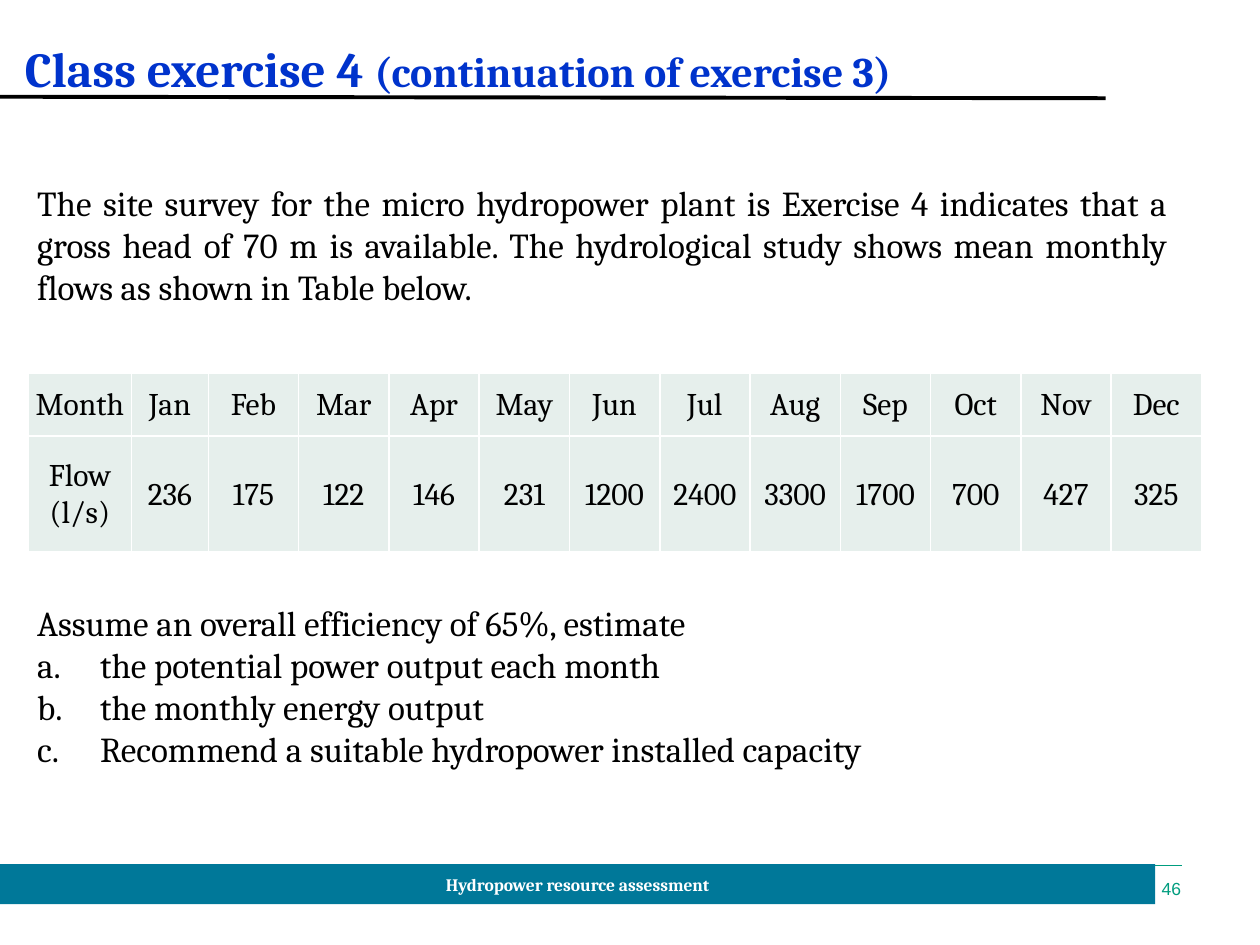
from dataclasses import dataclass
from typing import Any

from lxml.etree import SubElement
from pptx import Presentation
from pptx.dml.color import RGBColor
from pptx.enum.shapes import MSO_CONNECTOR, MSO_SHAPE
from pptx.enum.text import MSO_ANCHOR, PP_ALIGN
from pptx.oxml.ns import qn
from pptx.util import Cm, Pt

HUES = {
    "ink": "000000",
    "white": "FFFFFF",
    "title": "0033CC",
    "bar": "007899",
    "green": "009D7F",
    "cell": "E6EFEC",
}
SERIF = "Cambria"
FLOWS = {
    "Month": "Flow (l/s)", "Jan": "236", "Feb": "175", "Mar": "122",
    "Apr": "146", "May": "231", "Jun": "1200", "Jul": "2400",
    "Aug": "3300", "Sep": "1700", "Oct": "700", "Nov": "427", "Dec": "325",
}
WIDTHS = [2.08, 1.55] + [1.82] * 11
HEIGHTS = [1.27, 2.34]


@dataclass
class Run:
    text: str
    size: float
    hue: str = "ink"
    bold: bool = False
    font: str = SERIF


@dataclass
class Para:
    runs: list[Run]
    align: Any = PP_ALIGN.LEFT
    gap: float = 0
    item: bool = False


@dataclass
class Box:
    left: float
    top: float
    width: float
    height: float
    paras: list[Para]
    anchor: Any = MSO_ANCHOR.TOP
    inset: tuple[float, float] = (0, 0)
    fill: str = ""


@dataclass
class Line:
    start: tuple[float, float]
    end: tuple[float, float]
    hue: str
    width: float


def color(name: str) -> RGBColor:
    return RGBColor.from_string(HUES[name])


def letter(para: Any) -> None:
    props = para._p.get_or_add_pPr()
    props.set("marL", str(Cm(1.27)))
    props.set("indent", str(-Cm(1.27)))
    SubElement(props, qn("a:buFont"), typeface="+mj-lt")
    SubElement(props, qn("a:buAutoNum"), type="alphaLcPeriod")


def write(frame: Any, paras: list[Para]) -> None:
    for num, data in enumerate(paras):
        para = frame.add_paragraph() if num else frame.paragraphs[0]
        para.alignment = data.align
        if data.gap:
            para.space_before = Pt(data.gap)
        if data.item:
            letter(para)
        for part in data.runs:
            run = para.add_run()
            run.text = part.text
            run.font.name = part.font
            run.font.size = Pt(part.size)
            run.font.bold = part.bold
            run.font.color.rgb = color(part.hue)


def add_box(slide: Any, box: Box) -> None:
    area = Cm(box.left), Cm(box.top), Cm(box.width), Cm(box.height)
    if box.fill:
        shape = slide.shapes.add_shape(MSO_SHAPE.RECTANGLE, *area)
        shape.shadow.inherit = False
        shape.fill.solid()
        shape.fill.fore_color.rgb = color(box.fill)
        shape.line.fill.background()
    else:
        shape = slide.shapes.add_textbox(*area)
    frame = shape.text_frame
    frame.word_wrap = True
    frame.vertical_anchor = box.anchor
    frame.margin_left = frame.margin_right = Cm(box.inset[0])
    frame.margin_top = frame.margin_bottom = Cm(box.inset[1])
    write(frame, box.paras)


def add_line(slide: Any, line: Line) -> None:
    ends = [Cm(pos) for pos in line.start + line.end]
    shape = slide.shapes.add_connector(MSO_CONNECTOR.STRAIGHT, *ends)
    shape.line.color.rgb = color(line.hue)
    shape.line.width = Pt(line.width)
    SubElement(shape._element.spPr, qn("a:effectLst"))


def style(cell: Any) -> None:
    cell.vertical_anchor = MSO_ANCHOR.MIDDLE
    cell.margin_left = cell.margin_right = cell.margin_top = Cm(0.03)
    cell.margin_bottom = Cm(0)
    props = cell._tc.get_or_add_tcPr()
    for side in ("lnL", "lnR", "lnT", "lnB"):
        edge = SubElement(props, qn(f"a:{side}"), w=str(Pt(1)))
        fill = SubElement(edge, qn("a:solidFill"))
        SubElement(fill, qn("a:srgbClr"), val=HUES["white"])
    cell.fill.solid()
    cell.fill.fore_color.rgb = color("cell")


def add_flows(slide: Any) -> None:
    rows = [list(FLOWS), list(FLOWS.values())]
    size = Cm(sum(WIDTHS)), Cm(sum(HEIGHTS))
    frame = slide.shapes.add_table(2, len(FLOWS), Cm(0.57), Cm(7.52), *size)
    table = frame.table
    for col, width in zip(table.columns, WIDTHS):
        col.width = Cm(width)
    for row, height, texts in zip(table.rows, HEIGHTS, rows):
        row.height = Cm(height)
        for cell, text in zip(row.cells, texts):
            style(cell)
            write(cell.text_frame, [Para([Run(text, 18)], PP_ALIGN.CENTER)])


def body(text: str, gap: float = 0, item: bool = False) -> Para:
    return Para([Run(text, 20)], PP_ALIGN.JUSTIFY, gap, item)


PARTS = [
    Line((1.6, 17.45), (23.83, 17.45), "green", 1),
    Box(22.96, 17.7, 0.85, 0.43,
        [Para([Run("46", 10, "green", font="Arial")], PP_ALIGN.RIGHT)],
        MSO_ANCHOR.MIDDLE),
    Box(0, 17.42, 23.29, 0.81,
        [Para([Run("Hydropower resource assessment", 10, "white", True)],
              PP_ALIGN.CENTER)],
        MSO_ANCHOR.MIDDLE, (0.25, 0.13), "bar"),
    Box(0.5, 0.76, 18.95, 1.2,
        [Para([Run("Class exercise 4 ", 28, "title", True),
               Run("(continuation of exercise 3)", 24, "title", True)])],
        MSO_ANCHOR.BOTTOM),
    Box(0.5, 3.53, 23.29, 12.22, [
        body("The site survey for the micro hydropower plant is Exercise 4 "
             "indicates that a gross head of 70 m is available. The "
             "hydrological study shows mean monthly flows as shown in "
             "Table below."),
        body("Assume an overall efficiency of 65%, estimate", gap=168),
        body("the potential power output each month", item=True),
        body("the monthly energy output", item=True),
        body("Recommend a suitable hydropower installed capacity", item=True),
    ], inset=(0.25, 0.13)),
    Line((0, 1.95), (22.29, 1.98), "ink", 2.25),
]


def main() -> None:
    deck = Presentation()
    deck.slide_width, deck.slide_height = Cm(25.4), Cm(19.05)
    slide = deck.slides.add_slide(deck.slide_layouts[6])
    for part in PARTS:
        if isinstance(part, Line):
            add_line(slide, part)
        else:
            add_box(slide, part)
    add_flows(slide)
    deck.save("out.pptx")


if __name__ == "__main__":
    main()
